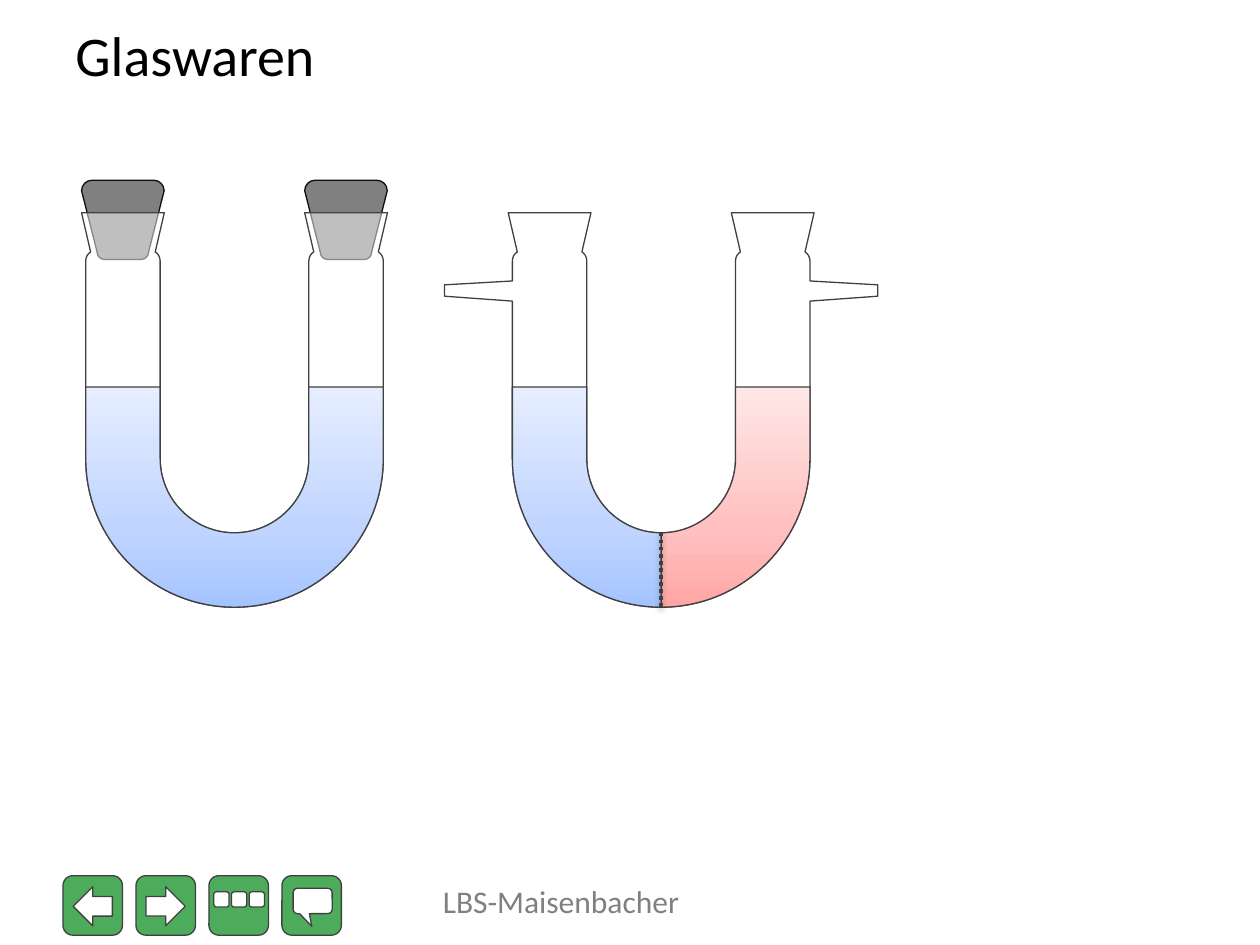
from copy import deepcopy
from math import cos, radians, sin, tan

from lxml.etree import SubElement
from pptx import Presentation
from pptx.dml.color import RGBColor
from pptx.enum.dml import MSO_LINE
from pptx.enum.shapes import MSO_CONNECTOR, MSO_SHAPE as Preset
from pptx.enum.text import MSO_ANCHOR
from pptx.oxml.ns import qn
from pptx.util import Pt

BLACK = RGBColor(0x00, 0x00, 0x00)
WHITE = RGBColor(0xFF, 0xFF, 0xFF)
OUTLINE = RGBColor(0x40, 0x40, 0x40)
STOPPER_LINE = RGBColor(0x0D, 0x0D, 0x0D)
GREY = RGBColor(0x80, 0x80, 0x80)
GREEN = RGBColor(0x4D, 0xAC, 0x5C)
BLUES = [RGBColor(0xA4, 0xC4, 0xFF), RGBColor(0xBF, 0xD4, 0xFF), RGBColor(0xE6, 0xEE, 0xFF)]
REDS = [RGBColor(0xFF, 0xA6, 0xA5), RGBColor(0xFF, 0xC0, 0xBF), RGBColor(0xFF, 0xE7, 0xE7)]
STOPS = [0, 0.35, 1]

# U-tube measures: x from the centre line, y from the rim
OUTER, INNER = 85, 42.5
BEND_Y, LIQUID_Y = 140.4, 99.6
RIM_OVERHANG = 2.4
SHOULDER = [(0, 27.5), (0, 25.2), (1.2, 23.3), (2.8, 22.4)]  # inset, y
SIDE_ARM = [(-85, 50.5), (-123.8, 47.7), (-123.8, 41.2), (-85, 39)]


# An outline is a list of segments: one point for a line, three for a curve
def lines(*points):
    return [[point] for point in points]


def curve(start, *controls_and_end):
    return [[start], list(controls_and_end)]


def arc(x, y, radius, start, end):
    a, b = radians(start), radians(end)
    handle = radius * 4 / 3 * tan((b - a) / 4)
    x1, y1 = x + radius * cos(a), y + radius * sin(a)
    x2, y2 = x + radius * cos(b), y + radius * sin(b)
    return curve((x1, y1), (x1 - handle * sin(a), y1 + handle * cos(a)),
                 (x2 + handle * sin(b), y2 - handle * cos(b)), (x2, y2))


def mirror(segments):
    points = iter([(-x, y) for segment in reversed(segments) for x, y in reversed(segment)])
    sizes = [1] + [len(segment) for segment in reversed(segments[1:])]
    return [[next(points) for _ in range(size)] for size in sizes]


def both_sides(half):
    return half + mirror(half)[1:]


def half_tube(side_arm):
    """Left half of the glass, from the outer bottom over the rim to the inner bottom."""
    outer = [(-OUTER + inset, y) for inset, y in SHOULDER]
    inner = [(-INNER - inset, y) for inset, y in reversed(SHOULDER)]
    rim = lines((-OUTER - RIM_OVERHANG, 0), (-INNER + RIM_OVERHANG, 0))
    return (arc(0, BEND_Y, OUTER, 90, 180) + (lines(*SIDE_ARM) if side_arm else [])
            + curve(*outer) + rim + curve(*inner) + arc(0, BEND_Y, INNER, 180, 90))


def half_liquid():
    return (arc(0, BEND_Y, OUTER, 90, 180) + lines((-OUTER, LIQUID_Y), (-INNER, LIQUID_Y))
            + arc(0, BEND_Y, INNER, 180, 90))


def style(shape, fill, line=OUTLINE):
    shape.shadow.inherit = False
    shape.fill.solid()
    shape.fill.fore_color.rgb = fill
    shape.line.color.rgb = line
    shape.line.width = Pt(0.75)


def add_outline(shapes, left, top, segments, fill, line=OUTLINE):
    corners = [(Pt(left + x), Pt(top + y)) for segment in segments for x, y in segment]
    builder = shapes.build_freeform(*corners[0], scale=1.0)
    builder.add_line_segments(corners[1:], close=True)
    shape = builder.convert_to_shape()
    # Join the three line steps of each curve into one Bézier step
    steps = iter(list(shape._element.spPr.iter(qn("a:lnTo"))))
    for segment in segments[1:]:
        parts = [next(steps) for _ in segment]
        if len(parts) == 3:
            parts[0].tag = qn("a:cubicBezTo")
            for part in parts[1:]:
                parts[0].append(part[0])
                part.getparent().remove(part)
    style(shape, fill, line)
    return shape


def set_gradient(shape, colors):
    fill = shape.fill
    fill.gradient()
    fill.gradient_angle = 90
    stop_list = shape._element.spPr.find(qn("a:gradFill")).find(qn("a:gsLst"))
    stop_list.append(deepcopy(stop_list[-1]))
    for stop, position, color in zip(fill.gradient_stops, STOPS, colors):
        stop.position = position
        stop.color.rgb = color


def add_stopper(shapes, left, top):
    segments = (arc(6, 6, 6, 180, 270) + arc(41.2, 6, 6, 270, 360)
                + arc(34, 41, 4.3, 0, 90) + arc(13.2, 41, 4.3, 90, 180))
    add_outline(shapes, left, top, segments, GREY, STOPPER_LINE)


def add_membrane(shapes, x, top, bottom):
    line = shapes.add_connector(MSO_CONNECTOR.STRAIGHT, Pt(x), Pt(top), Pt(x), Pt(bottom))
    line.line.color.rgb = OUTLINE
    line.line.width = Pt(2)
    line.line.dash_style = MSO_LINE.ROUND_DOT
    effects = SubElement(line._element.spPr, qn("a:effectLst"))
    shadow = SubElement(effects, qn("a:outerShdw"), blurRad=str(Pt(3.1)),
                        dist=str(Pt(1.6)), dir="5400000", rotWithShape="0")
    color = SubElement(shadow, qn("a:srgbClr"), val=str(BLACK))
    SubElement(color, qn("a:alpha"), val="38000")


def add_stoppered_tube(slide, center, top):
    shapes = slide.shapes.add_group_shape().shapes
    # Stoppers stand behind the half-transparent glass
    for rim_left in (-OUTER - RIM_OVERHANG, INNER - RIM_OVERHANG):
        add_stopper(shapes, center + rim_left, top - 18.6)
    glass = add_outline(shapes, center, top, both_sides(half_tube(side_arm=False)), WHITE)
    color = glass._element.spPr.find(qn("a:solidFill"))[0]
    SubElement(color, qn("a:alpha"), val="50000")
    set_gradient(add_outline(shapes, center, top, both_sides(half_liquid()), WHITE), BLUES)


def add_divided_tube(slide, center, top):
    shapes = slide.shapes.add_group_shape().shapes
    add_outline(shapes, center, top, both_sides(half_tube(side_arm=True)), WHITE)
    # One liquid on each side of the membrane
    half = half_liquid()
    for segments, colors in ((half, BLUES), (mirror(half), REDS)):
        set_gradient(add_outline(shapes, center, top, segments, WHITE), colors)
    add_membrane(shapes, center, top + BEND_Y + INNER, top + BEND_Y + OUTER)


def add_preset(slide, kind, left, top, width, height, fill=WHITE):
    shape = slide.shapes.add_shape(kind, Pt(left), Pt(top), Pt(width), Pt(height))
    style(shape, fill)
    return shape


def add_navigation(slide, left, top, size=34, pitch=41.7):
    lefts = [left + i * pitch for i in range(4)]
    for x in lefts:
        add_preset(slide, Preset.ROUNDED_RECTANGLE, x, top, size, size, GREEN)
    back, forward, overview, comment = lefts
    for x, turn in ((back, 180), (forward, 0)):
        add_preset(slide, Preset.RIGHT_ARROW, x + 5.8, top + 6.3, 22.4, 22.4).rotation = turn
    for i in range(3):
        add_preset(slide, Preset.ROUNDED_RECTANGLE, overview + 2.8 + i * 10.1, top + 9.2, 8.7, 8.7)
    bubble = add_preset(slide, Preset.ROUNDED_RECTANGULAR_CALLOUT, comment + 6.4, top + 7.2, 22.3, 14.5)
    for i, value in enumerate((-0.02, 1, 0.17)):
        bubble.adjustments[i] = value


def add_text(slide, text, left, top, width, height, size, color, anchor):
    frame = slide.shapes.add_textbox(Pt(left), Pt(top), Pt(width), Pt(height)).text_frame
    frame.word_wrap = True
    frame.vertical_anchor = anchor
    frame.text = text
    font = frame.paragraphs[0].runs[0].font
    font.name = "Calibri"
    font.size = Pt(size)
    font.color.rgb = color


def main():
    presentation = Presentation()
    presentation.slide_width, presentation.slide_height = Pt(720), Pt(540)
    slide = presentation.slides.add_slide(presentation.slide_layouts[6])

    add_navigation(slide, 36, 500.4)
    add_text(slide, "Glaswaren", 36, 9.5, 648, 42.5, 32, BLACK, MSO_ANCHOR.MIDDLE)
    add_stoppered_tube(slide, 134, 121.6)
    add_divided_tube(slide, 377.8, 121.6)
    add_text(slide, "LBS-Maisenbacher", 246, 500.4, 228, 29, 18, GREY, MSO_ANCHOR.TOP)

    presentation.save("out.pptx")


if __name__ == "__main__":
    main()
